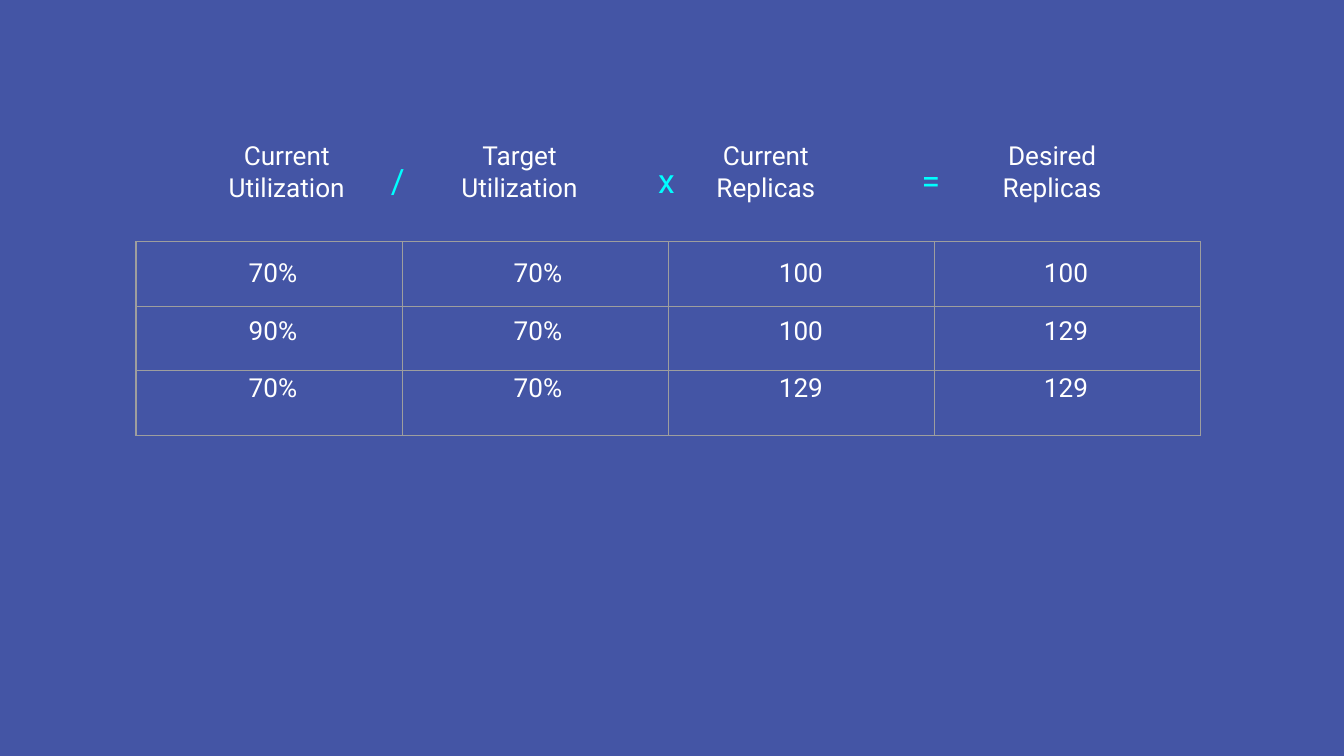
from dataclasses import dataclass

import lxml.etree
import pptx
import pptx.dml.color
import pptx.enum.text
import pptx.oxml.ns
import pptx.slide
import pptx.table
import pptx.util

Cm = pptx.util.Cm
Pt = pptx.util.Pt
RGBColor = pptx.dml.color.RGBColor
PP_ALIGN = pptx.enum.text.PP_ALIGN

INDIGO = RGBColor(0x44, 0x55, 0xA5)
WHITE = RGBColor(0xFF, 0xFF, 0xFF)
CYAN = RGBColor(0x00, 0xFF, 0xFF)
GREY = RGBColor(0x9E, 0x9E, 0x9E)
FONT = "Roboto"
INSET = Cm(0.25)


@dataclass(frozen=True)
class Label:
    text: str
    left: float
    top: float
    width: float
    height: float
    size: int = 14
    color: RGBColor = WHITE
    align: PP_ALIGN = PP_ALIGN.LEFT


HEADINGS = [
    Label(text, left, 2.39, width, 1.09, align=PP_ALIGN.CENTER)
    for text, left, width in (
        ("Current Utilization", 3.91, 3.02),
        ("Target Utilization", 8.31, 3.02),
        ("Current Replicas", 13.0, 2.95),
        ("Desired Replicas", 18.31, 3.15),
    )
]
OPERATORS = [
    Label(text, left, 2.77, 0.86, 0.81, size=18, color=CYAN)
    for text, left in (("/", 7.14), ("x", 12.19), ("=", 17.17))
]
SCENARIOS = (
    ("70%", "70%", "100", "100"),
    ("90%", "70%", "100", "129"),
    ("70%", "70%", "129", "129"),
)
VALUES = [
    Label(value, 4.45 + 5.01 * column, 4.6 + 1.09 * row, 1.45, 1.09)
    for row, scenario in enumerate(SCENARIOS)
    for column, value in enumerate(scenario)
]


def draw_label(slide: pptx.slide.Slide, label: Label) -> None:
    box = slide.shapes.add_textbox(
        Cm(label.left), Cm(label.top), Cm(label.width), Cm(label.height)
    )
    frame = box.text_frame
    frame.word_wrap = True
    frame.margin_left = frame.margin_right = INSET
    frame.margin_top = frame.margin_bottom = INSET
    frame.text = label.text
    paragraph = frame.paragraphs[0]
    paragraph.alignment = label.align
    font = paragraph.runs[0].font
    font.name = FONT
    font.size = Pt(label.size)
    font.color.rgb = label.color


def outline_cell(cell: pptx.table._Cell) -> None:
    qn = pptx.oxml.ns.qn
    properties = cell._tc.get_or_add_tcPr()
    for position, side in enumerate(("lnL", "lnR", "lnT", "lnB")):
        border = lxml.etree.Element(qn(f"a:{side}"), w=str(Pt(0.75)))
        fill = lxml.etree.SubElement(border, qn("a:solidFill"))
        lxml.etree.SubElement(fill, qn("a:srgbClr"), val=str(GREY))
        properties.insert(position, border)


def draw_grid(slide: pptx.slide.Slide) -> None:
    rows, columns = len(SCENARIOS), len(SCENARIOS[0])
    column_width, row_height = Cm(5.03), Cm(1.22)
    grid = slide.shapes.add_table(
        rows, columns, Cm(2.57), Cm(4.57), column_width * columns, row_height * rows
    ).table
    grid.first_row = False
    grid.horz_banding = False
    for column in grid.columns:
        column.width = column_width
    for row in grid.rows:
        row.height = row_height
    for cell in grid.iter_cells():
        cell.fill.background()
        outline_cell(cell)


def main() -> None:
    presentation = pptx.Presentation()
    presentation.slide_width = Cm(25.4)
    presentation.slide_height = Cm(14.29)
    slide = presentation.slides.add_slide(presentation.slide_layouts[6])
    slide.background.fill.solid()
    slide.background.fill.fore_color.rgb = INDIGO
    draw_grid(slide)
    for label in HEADINGS + OPERATORS + VALUES:
        draw_label(slide, label)
    presentation.save("out.pptx")


if __name__ == "__main__":
    main()
